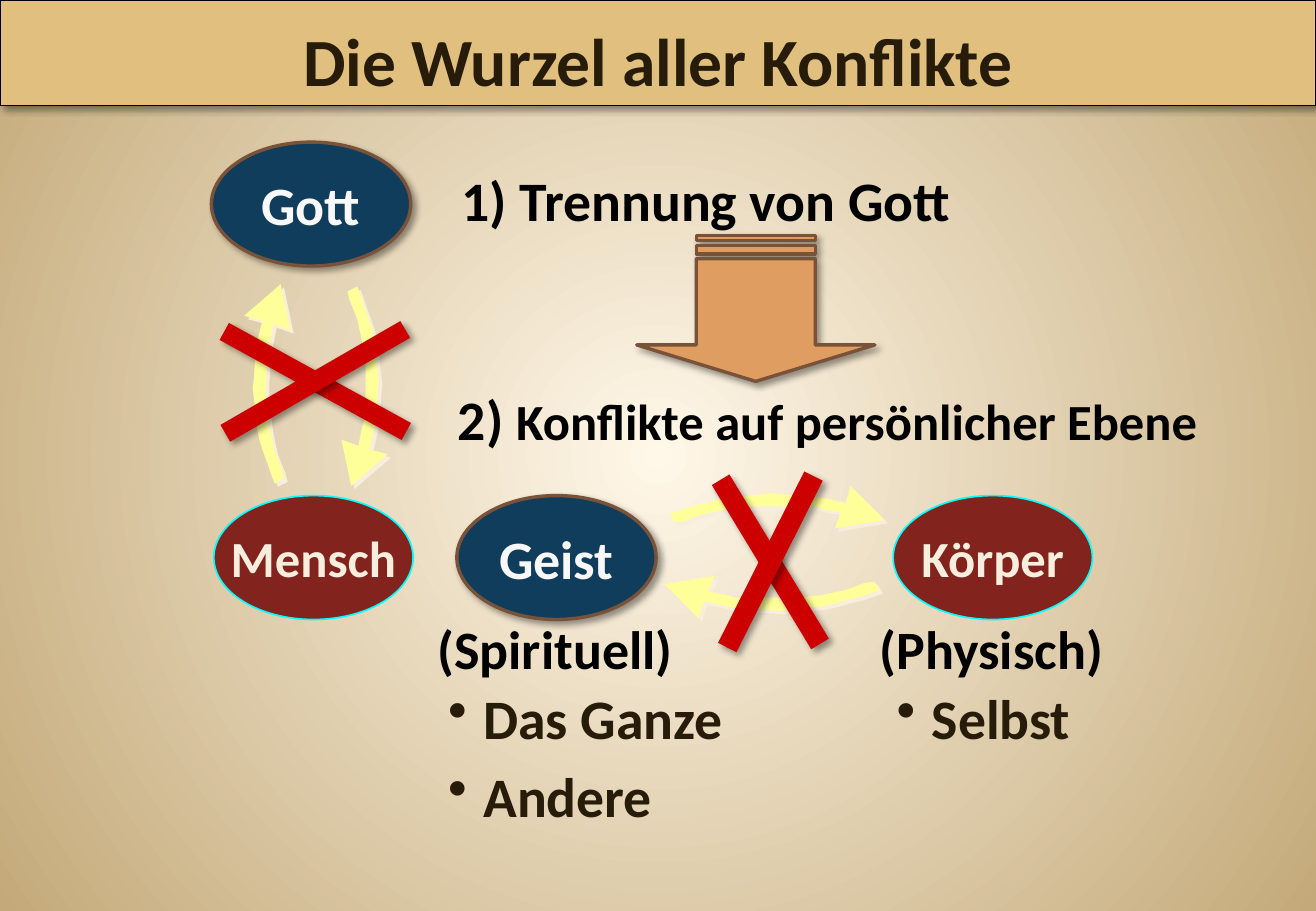
import lxml.etree
import pptx
import pptx.dml.color
import pptx.enum.dml
import pptx.enum.shapes
import pptx.enum.text
import pptx.oxml.ns
import pptx.util

PX = 9144
RGBColor = pptx.dml.color.RGBColor
Pt = pptx.util.Pt
qn = pptx.oxml.ns.qn
Align = pptx.enum.text.PP_ALIGN
Anchor = pptx.enum.text.MSO_ANCHOR
Preset = pptx.enum.shapes.MSO_SHAPE

GLOW = RGBColor(0xFF, 0xF7, 0xE8)
SAND = RGBColor(0xC4, 0xAA, 0x7A)
GOLD = RGBColor(0xE1, 0xBF, 0x7E)
INK = RGBColor(0x26, 0x1C, 0x09)
BLACK = RGBColor(0x00, 0x00, 0x00)
WHITE = RGBColor(0xF8, 0xF8, 0xF8)
CREAM = RGBColor(0xF7, 0xEE, 0xDD)
BLUE = RGBColor(0x11, 0x3D, 0x5C)
BROWN = RGBColor(0x79, 0x53, 0x39)
MAROON = RGBColor(0x82, 0x23, 0x1D)
CYAN = RGBColor(0x00, 0xFF, 0xFF)
YELLOW = RGBColor(0xFF, 0xFF, 0x99)
RED = RGBColor(0xCC, 0x00, 0x00)
ORANGE = RGBColor(0xDF, 0x9D, 0x62)

DARK_SHADOW = (BLACK, 40, 4, 3)
PALE_SHADOW = (CREAM, 100, 0, 2.8)

CURVED_ARROW = [
    (225, 267), (222, 282), (220, 288), (220, 296), (219, 312), (219, 327),
    (219, 335), (221, 344), (222, 353), (224, 362), (226, 371), (229, 379),
    (232, 386), (234, 394), (226, 398), (223, 390), (220, 381), (217, 373),
    (214, 364), (212, 355), (211, 346), (210, 336), (209, 328), (208, 320),
    (209, 311), (210, 295), (211, 287), (212, 280), (216, 264), (201, 260),
    (231, 234), (239, 272),
]
ARROW_HEAD = [(720, 284), (671, 284), (671, 213), (573, 213), (573, 284),
              (524, 284), (622, 314)]


def paint_background(page):
    fill = page.background.fill
    fill.gradient()
    for stop, color in zip(fill.gradient_stops, (GLOW, SAND)):
        stop.color.rgb = color
    linear = next(page.element.iter(qn("a:lin")))
    circle = lxml.etree.Element(qn("a:path"), {"path": "circle"})
    lxml.etree.SubElement(circle, qn("a:fillToRect"),
                          dict.fromkeys("ltrb", "50000"))
    linear.getparent().replace(linear, circle)


def style(shape, fill, line=None, width=1, shadow=None):
    shape.fill.solid()
    shape.fill.fore_color.rgb = fill
    if line is None:
        shape.line.fill.background()
    else:
        shape.line.color.rgb = line
        shape.line.width = Pt(width)
    shape.shadow.inherit = False
    if shadow:
        color, opacity, blur, distance = shadow
        effects = shape._element.spPr.find(qn("a:effectLst"))
        outer = lxml.etree.SubElement(effects, qn("a:outerShdw"), {
            "blurRad": str(Pt(blur)), "dist": str(Pt(distance)),
            "dir": "2700000", "algn": "ctr", "rotWithShape": "0"})
        tint = lxml.etree.SubElement(outer, qn("a:srgbClr"), val=str(color))
        lxml.etree.SubElement(tint, qn("a:alpha"), val=str(opacity * 1000))


def write(para, text, size, color, align):
    para.text = text
    para.alignment = align
    font = para.font
    font.name, font.size, font.bold = "Calibri", Pt(size), True
    font.color.rgb = color


def add_preset(page, preset, left, top, width, height):
    return page.shapes.add_shape(preset, left * PX, top * PX,
                                 width * PX, height * PX)


def add_title(page, text):
    band = add_preset(page, Preset.RECTANGLE, 0, 0, 1083, 87)
    style(band, GOLD, BLACK, 0.75, DARK_SHADOW)
    band.text_frame.vertical_anchor = Anchor.BOTTOM
    write(band.text_frame.paragraphs[0], text, 40, INK, Align.CENTER)


def add_ellipse(page, left, top, text, inner):
    ellipse = add_preset(page, Preset.OVAL, left, top, 164, 102)
    if inner:
        style(ellipse, BLUE, BROWN, 2, DARK_SHADOW)
    else:
        style(ellipse, MAROON, CYAN)
    frame = ellipse.text_frame
    frame.word_wrap = False
    frame.vertical_anchor = Anchor.MIDDLE
    size, color = (32, WHITE) if inner else (30, CREAM)
    write(frame.paragraphs[0], text, size, color, Align.CENTER)


def add_outline(page, contours, fill, line=None, width=1, shadow=None):
    builder = page.shapes.build_freeform(*contours[0][0], scale=PX)
    for index, points in enumerate(contours):
        if index:
            builder.move_to(*points[0])
        builder.add_line_segments(points[1:], close=True)
    style(builder.convert_to_shape(), fill, line, width, shadow)


def add_curved_arrows(page):
    left = [(547 + (y - 234) * 1.08, 509 - (x - 201) * 0.92)
            for x, y in CURVED_ARROW]
    right = [(1275 - x, 909 - y) for x, y in left]
    down = [(520 - x, 634 - y) for x, y in CURVED_ARROW]
    for points in (left, right, CURVED_ARROW, down):
        add_outline(page, [points], YELLOW, shadow=PALE_SHADOW)


def add_cross(page, left, top, width, height, angles):
    for angle in angles:
        bar = add_preset(page, Preset.RECTANGLE, left, top, width, height)
        bar.rotation = angle
        style(bar, RED, shadow=DARK_SHADOW)


def add_block_arrow(page):
    stripes = [[(671, top), (573, top), (573, bottom), (671, bottom)]
               for top, bottom in ((202, 209), (194, 198))]
    add_outline(page, [ARROW_HEAD] + stripes, ORANGE, BROWN, 2, DARK_SHADOW)


def add_text(page, left, top, width, height, lines, size=33, color=BLACK,
             align=Align.LEFT, bullet=False):
    box = page.shapes.add_textbox(left * PX, top * PX, width * PX, height * PX)
    frame = box.text_frame
    frame.word_wrap = True
    for index, line in enumerate(lines):
        para = frame.add_paragraph() if index else frame.paragraphs[0]
        write(para, line, size, color, align)
        if bullet:
            para.space_after = Pt(6.6)
            properties = para._p.get_or_add_pPr()
            properties.set("marL", str(29 * PX))
            properties.set("indent", str(-29 * PX))
            mark = lxml.etree.Element(qn("a:buChar"), char="•")
            properties.find(qn("a:defRPr")).addprevious(mark)
    return frame


def main():
    deck = pptx.Presentation()
    deck.slide_width, deck.slide_height = 1083 * PX, 750 * PX
    page = deck.slides.add_slide(deck.slide_layouts[6])
    paint_background(page)

    add_curved_arrows(page)
    add_ellipse(page, 174, 117, "Gott", True)
    add_ellipse(page, 176, 408, "Mensch", False)
    add_ellipse(page, 376, 408, "Geist", True)
    add_ellipse(page, 735, 408, "Körper", False)
    add_cross(page, 174, 306, 171, 16, (208.8, 330))
    add_cross(page, 555, 454, 158, 17, (238.8, 296.7))

    add_text(page, 370, 132, 655, 65, ["1) Trennung von Gott"])
    conflicts = add_text(page, 367, 312, 655, 65, ["2) "])
    span = conflicts.paragraphs[0].add_run()
    span.text = "Konflikte auf persönlicher Ebene"
    span.font.size = Pt(30)
    for left, text in ((342, "(Spirituell)"), (701, "(Physisch)")):
        add_text(page, left, 502, 230, 63, [text], 32, align=Align.CENTER)
    add_text(page, 359, 558, 256, 131, ["Das Ganze", "Andere"],
             color=INK, bullet=True)
    add_text(page, 728, 558, 256, 65, ["Selbst"], color=INK, bullet=True)

    add_block_arrow(page)
    add_title(page, "Die Wurzel aller Konflikte")
    deck.save("out.pptx")


if __name__ == "__main__":
    main()
